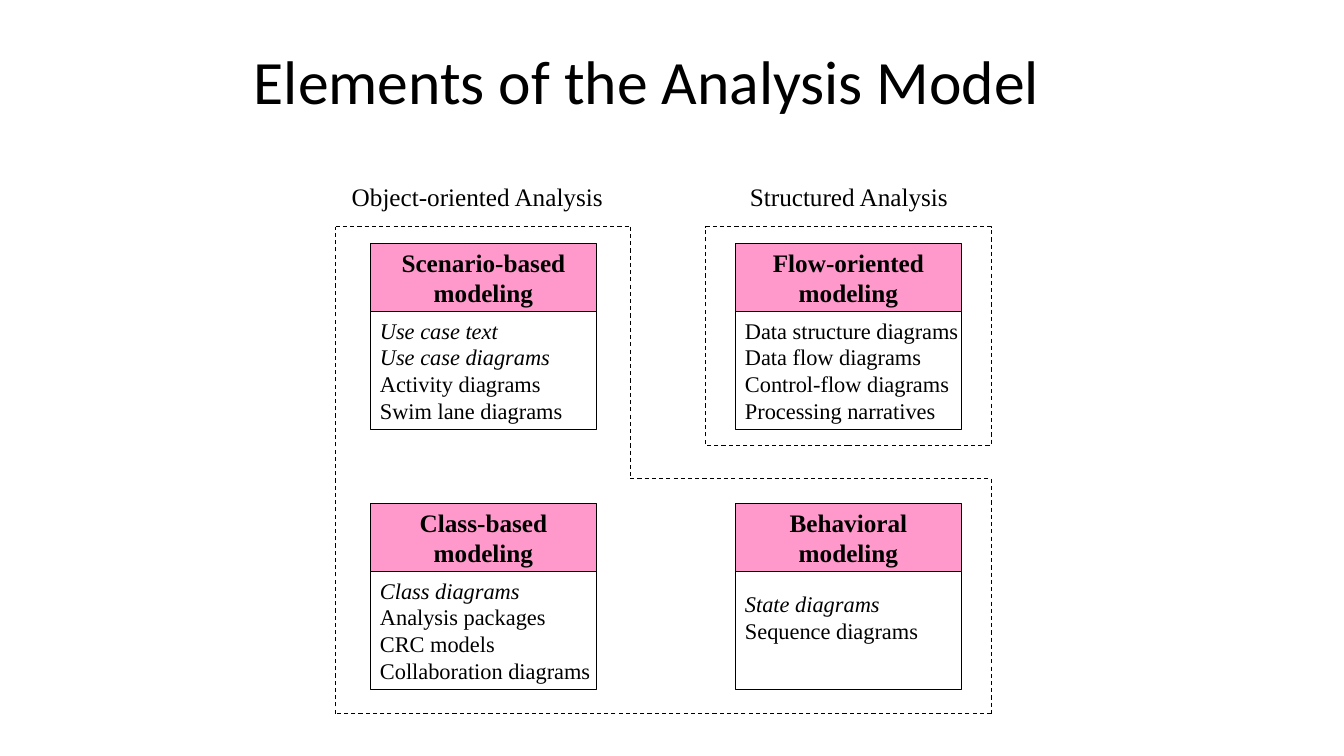
from dataclasses import dataclass
from itertools import pairwise

from lxml import etree
from pptx import Presentation
from pptx.dml.color import RGBColor
from pptx.enum.dml import MSO_LINE
from pptx.enum.shapes import MSO_CONNECTOR, MSO_SHAPE
from pptx.enum.text import MSO_ANCHOR, PP_ALIGN
from pptx.oxml.ns import qn
from pptx.util import Inches, Pt

RECT = MSO_SHAPE.RECTANGLE
LINE = MSO_CONNECTOR.STRAIGHT
DASH = MSO_LINE.DASH
MIDDLE = MSO_ANCHOR.MIDDLE
TOP = MSO_ANCHOR.TOP
LEFT = PP_ALIGN.LEFT
CENTER = PP_ALIGN.CENTER
COLORS = {"ink": "000000", "head": "FF99CC", "body": "FFFFFF"}
SERIF = "Times New Roman"
WIDTH, HEAD, BODY = 2.25, 0.67, 1.17


@dataclass
class Row:
    text: str
    size: int = 16
    font: str = SERIF
    bold: bool = False
    italic: bool = False


@dataclass
class Card:
    left: float
    top: float
    name: str
    rows: list[Row]
    foot: float = 0.05


@dataclass
class Label:
    left: float
    top: float
    width: float
    height: float
    row: Row
    align: int = CENTER
    anchor: int = TOP
    wrap: bool = False


CARDS = [
    Card(3.67, 2.42, "Scenario-based", [
        Row("Use case text", italic=True),
        Row("Use case diagrams", italic=True),
        Row("Activity diagrams"),
        Row("Swim lane diagrams"),
    ]),
    Card(3.67, 5, "Class-based", [
        Row("Class diagrams", italic=True),
        Row("Analysis packages"),
        Row("CRC models"),
        Row("Collaboration diagrams"),
    ]),
    Card(7.29, 2.42, "Flow-oriented", [
        Row("Data structure diagrams"),
        Row("Data flow diagrams"),
        Row("Control-flow diagrams"),
        Row("Processing narratives"),
    ]),
    Card(7.29, 5, "Behavioral", [
        Row("State diagrams", italic=True),
        Row("Sequence diagrams"),
    ], foot=0.31),
]
LABELS = [
    Label(2.42, 0.17, 8.5, 1.25,
          Row("Elements of the Analysis Model", 44, "Calibri"),
          LEFT, MIDDLE, True),
    Label(7.33, 1.75, 2.18, 0.4, Row("Structured Analysis", 18)),
    Label(3.38, 1.75, 2.71, 0.4, Row("Object-oriented Analysis", 18)),
]
BORDER = [
    (3.33, 2.25), (6.25, 2.25), (6.25, 4.75), (9.83, 4.75),
    (9.83, 7.08), (3.33, 7.08), (3.33, 2.25),
]


def color(key: str) -> RGBColor:
    return RGBColor.from_string(COLORS[key])


def stroke(shape, dash: bool = False) -> None:
    shape.line.color.rgb = color("ink")
    shape.line.width = Pt(0.75)
    if dash:
        shape.line.dash_style = DASH


def write(frame, rows: list[Row], align: int, anchor: int, wrap: bool) -> None:
    frame.word_wrap = wrap
    frame.vertical_anchor = anchor
    for i, row in enumerate(rows):
        para = frame.paragraphs[0] if i == 0 else frame.add_paragraph()
        para.alignment = align
        run = para.add_run()
        run.text = row.text
        font = run.font
        font.name, font.size = row.font, Pt(row.size)
        font.bold, font.italic = row.bold, row.italic
        font.color.rgb = color("ink")


def box(shapes, left: float, top: float, width: float, height: float,
        fill: str = "", dash: bool = False):
    shape = shapes.add_shape(
        RECT, Inches(left), Inches(top), Inches(width), Inches(height))
    shape.shadow.inherit = False
    if fill:
        shape.fill.solid()
        shape.fill.fore_color.rgb = color(fill)
    else:
        shape.fill.background()
    stroke(shape, dash)
    return shape


def draw_card(shapes, card: Card) -> None:
    group = shapes.add_group_shape().shapes
    body = box(group, card.left, card.top + HEAD, WIDTH, BODY, "body")
    write(body.text_frame, card.rows, LEFT, MIDDLE, False)
    body.text_frame.margin_bottom = Inches(card.foot)
    head = box(group, card.left, card.top, WIDTH, HEAD, "head")
    names = [Row(text, 18, bold=True) for text in (card.name, "modeling")]
    write(head.text_frame, names, CENTER, MIDDLE, False)


def draw_label(shapes, label: Label) -> None:
    text = shapes.add_textbox(Inches(label.left), Inches(label.top),
                              Inches(label.width), Inches(label.height))
    write(text.text_frame, [label.row], label.align, label.anchor, label.wrap)


def draw_line(shapes, start: tuple[float, float],
              end: tuple[float, float]) -> None:
    line = shapes.add_connector(LINE, *map(Inches, start + end))
    stroke(line, True)
    etree.SubElement(line._element.spPr, qn("a:effectLst"))


def main() -> None:
    deck = Presentation()
    deck.slide_width, deck.slide_height = Inches(13.33), Inches(7.5)
    shapes = deck.slides.add_slide(deck.slide_layouts[6]).shapes
    for card in CARDS:
        draw_card(shapes, card)
    box(shapes, 7, 2.25, 2.83, 2.17, dash=True)
    for start, end in pairwise(BORDER):
        draw_line(shapes, start, end)
    for label in LABELS:
        draw_label(shapes, label)
    deck.save("out.pptx")


if __name__ == "__main__":
    main()
